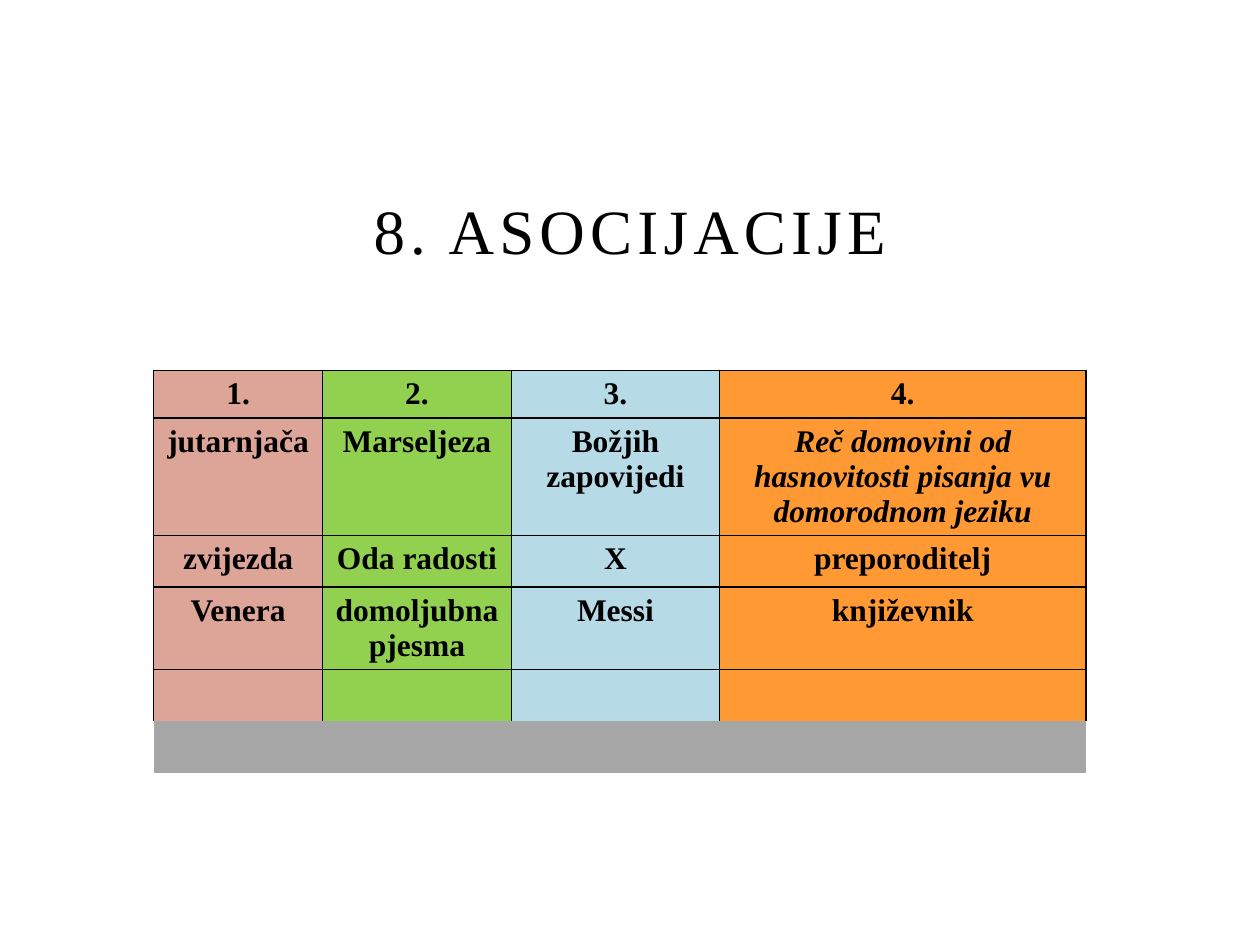
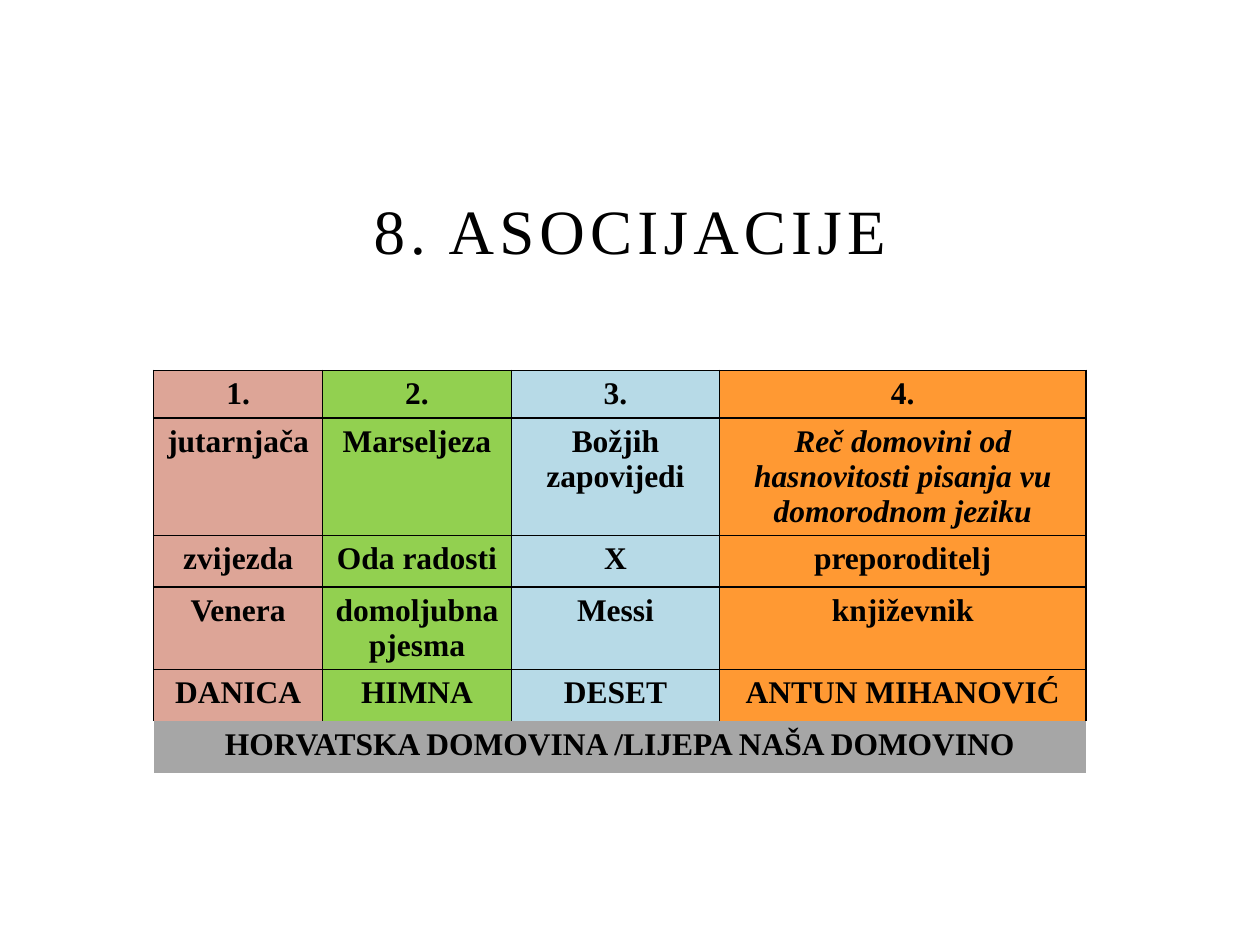
from dataclasses import dataclass

from lxml import etree
from pptx import Presentation
from pptx.dml.color import RGBColor
from pptx.enum.text import MSO_ANCHOR, MSO_AUTO_SIZE, PP_ALIGN
from pptx.oxml.ns import qn
from pptx.util import Inches, Pt

CENTER = PP_ALIGN.CENTER
BOTTOM = MSO_ANCHOR.BOTTOM
NO_AUTOFIT = MSO_AUTO_SIZE.NONE

FONT = "Times New Roman"
COLORS = {
    "text": "000000",
    "rose": "DDA597",
    "green": "92D050",
    "blue": "B7DAE7",
    "orange": "FF9933",
    "gray": "A6A6A6",
}
TITLE = "8. ASOCIJACIJE"
ROW_HEIGHTS = (0.37, 0.93, 0.41, 0.65, 0.41, 0.41)
SOLUTION_ROW = 4
FINAL_ROW = 5
BORDER_WIDTH = Pt(1)


@dataclass
class Column:
    width: float
    color: str
    clues: tuple[str, ...]
    solution: str
    italic_clue: str = ""


COLUMNS = (
    Column(1.34, "rose", ("1.", "jutarnjača", "zvijezda", "Venera"), "DANICA"),
    Column(1.5, "green", ("2.", "Marseljeza", "Oda radosti", "domoljubna pjesma"), "HIMNA"),
    Column(1.65, "blue", ("3.", "Božjih zapovijedi", "X", "Messi"), "DESET"),
    Column(
        2.91,
        "orange",
        ("4.", "Reč domovini od hasnovitosti pisanja vu domorodnom jeziku",
         "preporoditelj", "književnik"),
        "ANTUN MIHANOVIĆ",
        italic_clue="Reč domovini od hasnovitosti pisanja vu domorodnom jeziku",
    ),
)
FINAL_SOLUTION = "HORVATSKA DOMOVINA /LIJEPA NAŠA DOMOVINO"


def add_span(para, text: str, size: int, bold: bool = False, italic: bool = False):
    para.alignment = CENTER
    span = para.add_run()
    span.text = text
    span.font.name = FONT
    span.font.size = Pt(size)
    span.font.bold = bold
    span.font.italic = italic
    span.font.color.rgb = RGBColor.from_string(COLORS["text"])
    return span


def set_borders(cell, visible_sides: str) -> None:
    """Draw the listed sides (L, R, T, B) and clear the others."""
    properties = cell._tc.get_or_add_tcPr()
    for side in "LRTB":
        line = etree.SubElement(properties, qn(f"a:ln{side}"), w=str(BORDER_WIDTH))
        if side in visible_sides:
            fill = etree.SubElement(line, qn("a:solidFill"))
            etree.SubElement(fill, qn("a:srgbClr"), val=COLORS["text"])
        else:
            etree.SubElement(line, qn("a:noFill"))


def format_cell(cell, color: str, visible_sides: str) -> None:
    set_borders(cell, visible_sides)
    cell.fill.solid()
    cell.fill.fore_color.rgb = RGBColor.from_string(COLORS[color])


def add_title(page) -> None:
    title = page.shapes.title
    title.left, title.top = Inches(1.5), Inches(1.42)
    title.width, title.height = Inches(7), Inches(0.75)
    frame = title.text_frame
    frame.auto_size = NO_AUTOFIT
    frame.vertical_anchor = BOTTOM
    span = add_span(frame.paragraphs[0], TITLE, 36)
    span.font._element.set("spc", "300")


def add_association_table(page, solved: bool) -> None:
    width = sum(column.width for column in COLUMNS)
    table = page.shapes.add_table(
        len(ROW_HEIGHTS), len(COLUMNS), Inches(1.22), Inches(2.94),
        Inches(width), Inches(sum(ROW_HEIGHTS)),
    ).table
    table.first_row = table.horz_banding = False
    for row, height in zip(table.rows, ROW_HEIGHTS):
        row.height = Inches(height)

    for index, column in enumerate(COLUMNS):
        table.columns[index].width = Inches(column.width)
        words = column.clues + ((column.solution,) if solved else ())
        for row_index in range(FINAL_ROW):
            sides = "LRT" if row_index == SOLUTION_ROW else "LRTB"
            format_cell(table.cell(row_index, index), column.color, sides)
        for row_index, word in enumerate(words):
            para = table.cell(row_index, index).text_frame.paragraphs[0]
            add_span(para, word, 18, bold=True, italic=word == column.italic_clue)
        format_cell(table.cell(FINAL_ROW, index), "gray", "")

    if solved:
        final_cell = table.cell(FINAL_ROW, 0)
        final_cell.merge(table.cell(FINAL_ROW, len(COLUMNS) - 1))
        add_span(final_cell.text_frame.paragraphs[0], FINAL_SOLUTION, 18, bold=True)


def main() -> None:
    deck = Presentation()
    deck.slide_width, deck.slide_height = Inches(10), Inches(7.5)
    title_only = deck.slide_layouts.get_by_name("Title Only")
    for solved in (False, True):
        page = deck.slides.add_slide(title_only)
        add_title(page)
        add_association_table(page, solved)
    deck.save("out.pptx")


if __name__ == "__main__":
    main()
